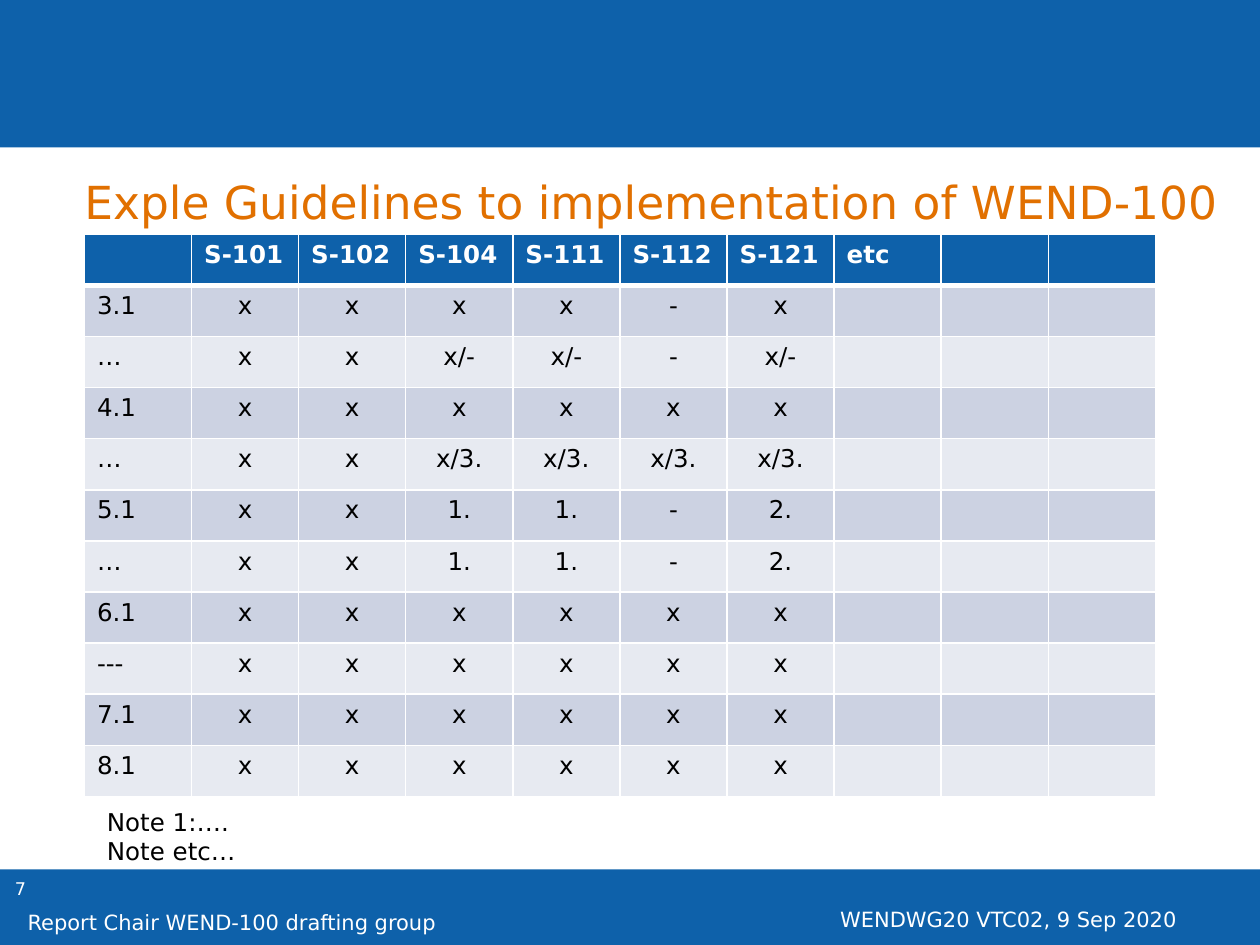
from dataclasses import dataclass

from lxml import etree
from pptx import Presentation
from pptx import util as u
from pptx.dml.color import RGBColor
from pptx.enum import shapes, text
from pptx.oxml.ns import qn


@dataclass(frozen=True)
class Theme:
    font: str = "DejaVu Sans"
    blue: str = "0E61AA"
    orange: str = "E17000"
    white: str = "FFFFFF"
    black: str = "000000"
    bands: tuple = ("CCD2E2", "E7EAF1")
    title: int = 26
    body: int = 14
    footer: int = 12
    number: int = 10


THEME = Theme()
WIDTH, HEIGHT = u.Inches(10), u.Inches(7.5)
COLUMNS = 10
HEADER = ["", "S-101", "S-102", "S-104", "S-111", "S-112", "S-121", "etc"]
GUIDELINES = [
    ("3.1", "x x x x - x"),
    ("…", "x x x/- x/- - x/-"),
    ("4.1", "x x x x x x"),
    ("…", "x x x/3. x/3. x/3. x/3."),
    ("5.1", "x x 1. 1. - 2."),
    ("…", "x x 1. 1. - 2."),
    ("6.1", "x x x x x x"),
    ("---", "x x x x x x"),
    ("7.1", "x x x x x x"),
    ("8.1", "x x x x x x"),
]


def place(left, top, width, height):
    return [int(left * WIDTH), int(top * HEIGHT), int(width * WIDTH), int(height * HEIGHT)]


def write(tf, content, size, color, bold=False, align=text.PP_ALIGN.LEFT):
    tf.text = content
    for p in tf.paragraphs:
        p.alignment = align
        for r in p.runs:
            r.font.name = THEME.font
            r.font.size = u.Pt(size)
            r.font.bold = bold
            r.font.color.rgb = RGBColor.from_string(color)


def add_band(s, top, height):
    sp = s.shapes.add_shape(shapes.MSO_SHAPE.RECTANGLE, *place(0, top, 1, height))
    sp.shadow.inherit = False
    sp.fill.solid()
    sp.fill.fore_color.rgb = RGBColor.from_string(THEME.blue)
    sp.line.fill.background()


def add_label(s, box, content, size, color):
    tf = s.shapes.add_textbox(*place(*box)).text_frame
    tf.word_wrap = True
    write(tf, content, size, color)


def set_title(s, box, content):
    sp = s.shapes.title
    sp.left, sp.top, sp.width, sp.height = place(*box)
    tf = sp.text_frame
    tf.margin_left = tf.margin_right = tf.margin_top = tf.margin_bottom = 0
    tf.vertical_anchor = text.MSO_ANCHOR.TOP
    tf.word_wrap = True
    tf.auto_size = text.MSO_AUTO_SIZE.NONE
    write(tf, content, THEME.title, THEME.orange)


def set_borders(cell, top, bottom):
    tc_pr = cell._tc.get_or_add_tcPr()
    for side, points in (("L", 1), ("R", 1), ("T", top), ("B", bottom)):
        line = etree.SubElement(tc_pr, qn(f"a:ln{side}"), w=str(u.Pt(points)))
        fill = etree.SubElement(line, qn("a:solidFill"))
        etree.SubElement(fill, qn("a:srgbClr"), val=THEME.white)


def format_cell(cell, row, column, content):
    header = row == 0
    set_borders(cell, 3 if row == 1 else 1, 3 if header else 1)
    cell.fill.solid()
    fill = THEME.blue if header else THEME.bands[(row - 1) % 2]
    cell.fill.fore_color.rgb = RGBColor.from_string(fill)
    centered = not header and column > 0
    write(
        cell.text_frame, content, THEME.body,
        THEME.white if header else THEME.black, header,
        text.PP_ALIGN.CENTER if centered else text.PP_ALIGN.LEFT,
    )


def add_matrix(s, box):
    rows = [HEADER] + [[label, *marks.split()] for label, marks in GUIDELINES]
    table = s.shapes.add_table(len(rows), COLUMNS, *place(*box)).table
    for i, row in enumerate(rows):
        padded = row + [""] * (COLUMNS - len(row))
        for j, content in enumerate(padded):
            format_cell(table.cell(i, j), i, j, content)


def main():
    prs = Presentation()
    prs.slide_width, prs.slide_height = WIDTH, HEIGHT
    s = prs.slides.add_slide(prs.slide_layouts[5])
    add_band(s, 0.92, 0.08)
    add_band(s, 0, 0.156)
    add_label(s, (0.002, 0.923, 0.078, 0.053), "7", THEME.number, THEME.white)
    add_label(s, (0.657, 0.953, 0.343, 0.032), "WENDWG20 VTC02, 9 Sep 2020", THEME.footer, THEME.white)
    add_label(s, (0.012, 0.956, 0.438, 0.032), "Report Chair WEND-100 drafting group", THEME.footer, THEME.white)
    add_matrix(s, (0.067, 0.248, 0.85, 0.595))
    set_title(s, (0.067, 0.184, 0.933, 0.059), "Exple Guidelines to implementation of WEND-100")
    add_label(s, (0.075, 0.847, 0.323, 0.076), "Note 1:….\nNote etc…", THEME.body, THEME.black)
    prs.save("out.pptx")


if __name__ == "__main__":
    main()
